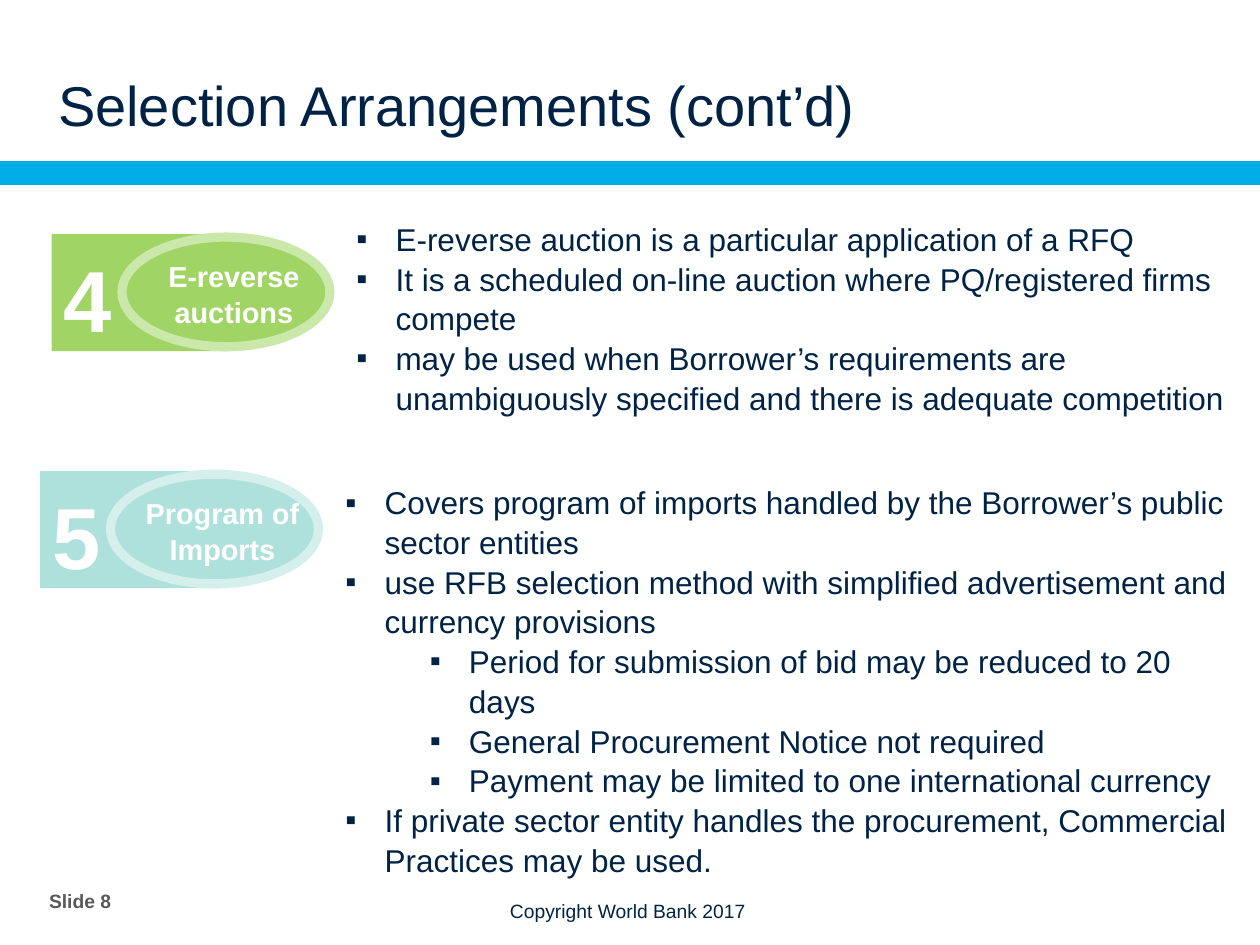
from dataclasses import dataclass

from lxml import etree
from pptx import Presentation
from pptx.dml.color import RGBColor
from pptx.enum.shapes import MSO_SHAPE
from pptx.enum.text import MSO_ANCHOR, MSO_AUTO_SIZE, PP_ALIGN
from pptx.oxml.ns import qn
from pptx.util import Cm, Pt

RECTANGLE, OVAL = MSO_SHAPE.RECTANGLE, MSO_SHAPE.OVAL
TOP, MIDDLE, BOTTOM = MSO_ANCHOR.TOP, MSO_ANCHOR.MIDDLE, MSO_ANCHOR.BOTTOM
LEFT, CENTER = PP_ALIGN.LEFT, PP_ALIGN.CENTER
NO_AUTOFIT = MSO_AUTO_SIZE.NONE


@dataclass(frozen=True)
class Theme:
    font: str = "Arial"
    navy: str = "002345"
    band: str = "00ADE4"
    gray: str = "595959"
    white: str = "FFFFFF"
    green: str = "A0D565"
    green_rim: str = "CAE8AA"
    teal: str = "AEE0DC"
    teal_rim: str = "D5EFED"
    title: float = 32
    number: float = 49.5
    label: float = 16.5
    body: float = 18
    footer: float = 11
    spacing: float = 1.05


THEME = Theme()

AUCTION_POINTS = [
    (0, "E-reverse auction is a particular application of a RFQ"),
    (0, "It is a scheduled on-line auction where PQ/registered firms compete"),
    (0, "may be used when Borrower’s requirements are unambiguously specified "
        "and there is adequate competition"),
]
IMPORT_POINTS = [
    (0, "Covers program of imports handled by the Borrower’s public sector entities"),
    (0, "use RFB selection method with simplified advertisement and currency provisions"),
    (1, "Period for submission of bid may be reduced to 20 days"),
    (1, "General Procurement Notice not required"),
    (1, "Payment may be limited to one international currency"),
    (0, "If private sector entity handles the procurement, Commercial Practices may be used."),
]


def place(shape, box):
    shape.left, shape.top, shape.width, shape.height = map(Cm, box)


def format_paragraph(paragraph, size, color, bold=False, align=LEFT, spacing=1.0):
    paragraph.alignment = align
    paragraph.line_spacing = spacing
    paragraph.space_before = Pt(0)
    for run in paragraph.runs:
        run.font.name = THEME.font
        run.font.size = Pt(size)
        run.font.bold = bold
        run.font.color.rgb = RGBColor.from_string(color)


def write(shape, text, size, color, anchor=TOP, margin=None, wrap=True, **style):
    frame = shape.text_frame
    frame.word_wrap = wrap
    frame.auto_size = NO_AUTOFIT
    frame.vertical_anchor = anchor
    if margin is not None:
        frame.margin_left = frame.margin_right = Cm(margin)
        frame.margin_top = frame.margin_bottom = Cm(margin)
    frame.text = text
    format_paragraph(frame.paragraphs[0], size, color, **style)


def add_block(shapes, kind, box, fill, rim=None):
    block = shapes.add_shape(kind, *map(Cm, box))
    block.shadow.inherit = False
    block.fill.solid()
    block.fill.fore_color.rgb = RGBColor.from_string(fill)
    if rim:
        block.line.color.rgb = RGBColor.from_string(rim)
        block.line.width = Pt(5.25)
    else:
        block.line.fill.background()
    return block


def add_header(slide, title_box, band_box):
    title = slide.shapes.title
    place(title, title_box)
    write(title, "Selection Arrangements (cont’d)", THEME.title, THEME.navy,
          anchor=BOTTOM, margin=0)
    add_block(slide.shapes, RECTANGLE, band_box, THEME.band)


def add_badge(slide, left, top, number, caption, fill, rim):
    shapes = slide.shapes.add_group_shape().shapes
    plate = add_block(shapes, RECTANGLE, (left, top, 3.63, 2.36), fill)
    write(plate, number, THEME.number, THEME.white, bold=True, spacing=THEME.spacing)
    add_block(shapes, OVAL, (left + 1.42, top + 0.06, 4.19, 2.21), fill, rim)
    label = shapes.add_textbox(*map(Cm, (left + 1.45, top + 0.33, 4.45, 1.68)))
    write(label, caption, THEME.label, THEME.white, bold=True, align=CENTER,
          spacing=THEME.spacing)


def add_bullet(paragraph, level):
    paragraph.level = level
    properties = paragraph._p.get_or_add_pPr()
    properties.set("marL", str(Cm(0.79 + 1.7 * level)))
    properties.set("indent", str(-Cm(0.79)))
    etree.SubElement(properties, qn("a:buFont")).set("typeface", THEME.font)
    etree.SubElement(properties, qn("a:buChar")).set("char", "▪")


def fill_list(body, box, points):
    place(body, box)
    frame = body.text_frame
    frame.word_wrap = True
    frame.auto_size = NO_AUTOFIT
    frame.vertical_anchor = TOP
    frame.text = "\n".join(text for _, text in points)
    for paragraph, (level, _) in zip(frame.paragraphs, points):
        add_bullet(paragraph, level)
        format_paragraph(paragraph, THEME.body, THEME.navy, spacing=THEME.spacing)


def add_footer(slide, number_box, copyright_box):
    page = slide.shapes.add_textbox(*map(Cm, number_box))
    write(page, "Slide 8", THEME.footer, THEME.gray, anchor=MIDDLE, margin=0, bold=True)
    notice = slide.shapes.add_textbox(*map(Cm, copyright_box))
    write(notice, "Copyright World Bank 2017", THEME.footer, THEME.navy, wrap=False)


def main():
    deck = Presentation()
    deck.slide_width, deck.slide_height = Cm(25.4), Cm(19.05)
    slide = deck.slides.add_slide(deck.slide_layouts[3])
    auctions, imports = slide.placeholders[1], slide.placeholders[2]

    add_header(slide, (1.17, 0.66, 23.5, 2.11), (0, 3.25, 25.4, 0.48))
    add_badge(slide, 1.04, 4.72, "4", "E-reverse auctions", THEME.green, THEME.green_rim)
    fill_list(auctions, (6.93, 4.27, 18.24, 4.88), AUCTION_POINTS)
    add_badge(slide, 0.81, 9.5, "5", "Program of Imports", THEME.teal, THEME.teal_rim)
    fill_list(imports, (6.71, 9.58, 18.39, 7.95), IMPORT_POINTS)
    add_footer(slide, (0.99, 17.65, 1.75, 1.02), (10.03, 18.01, 5.41, 0.74))
    deck.save("out.pptx")


if __name__ == "__main__":
    main()
